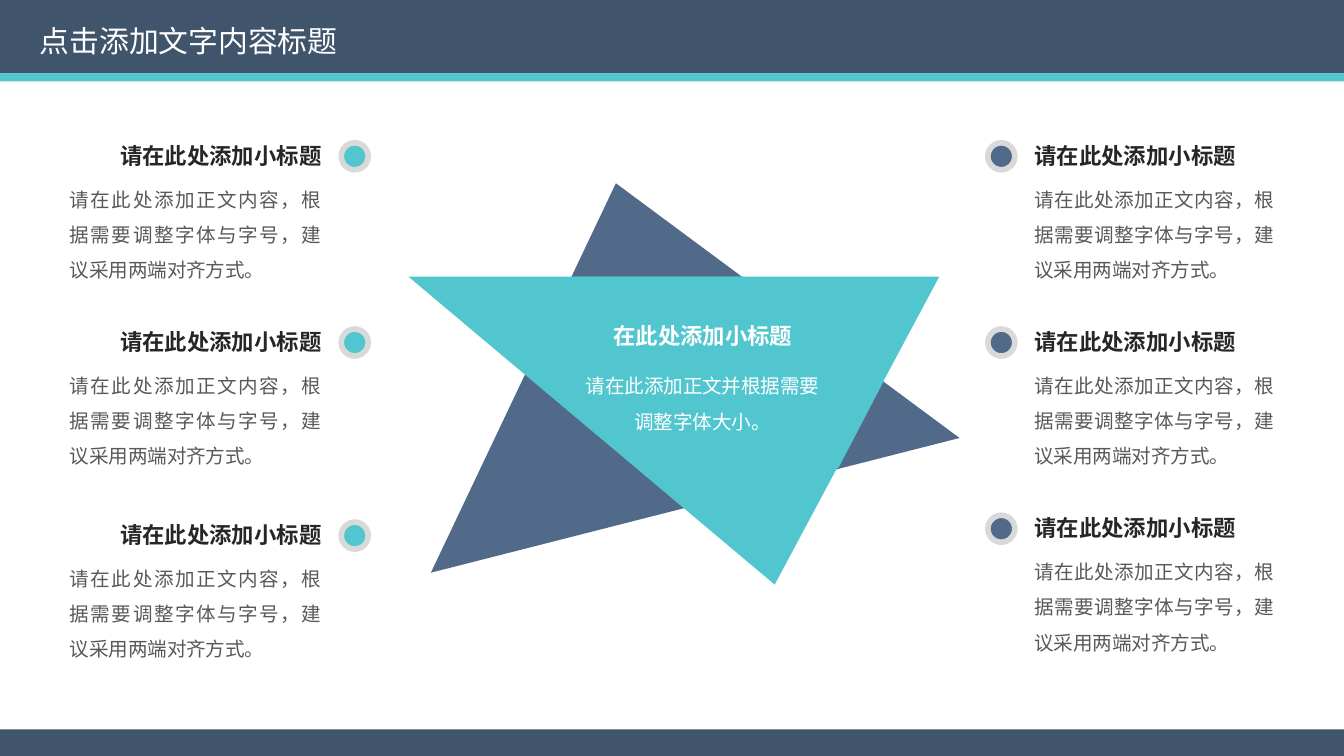
from dataclasses import dataclass

from lxml import etree
from pptx import Presentation
from pptx.dml.color import RGBColor
from pptx.enum import shapes, text
from pptx.oxml import ns
from pptx.util import Cm, Pt


@dataclass(frozen=True)
class Theme:
    font: str = "Noto Sans CJK SC"
    navy: str = "40546C"
    blue: str = "516A89"
    teal: str = "51C6CF"
    ring: str = "D9D9D9"
    white: str = "FFFFFF"
    dark: str = "262626"
    gray: str = "595959"
    title: float = 16
    head: float = 12
    body: float = 10.5


class Deck:
    """Holds the theme and the slide being drawn."""

    def __init__(self, theme, slide):
        self.theme = theme
        self.slide = slide

    def paint(self, shape, color):
        shape.shadow.inherit = False
        shape.fill.solid()
        shape.fill.fore_color.rgb = RGBColor.from_string(color)
        shape.line.fill.background()
        return shape

    def shape(self, kind, box, color):
        item = self.slide.shapes.add_shape(kind, *map(Cm, box))
        return self.paint(item, color)

    def bar(self, top, height, color):
        self.shape(shapes.MSO_SHAPE.RECTANGLE, (0, top, 25.4, height), color)

    def tri(self, box, tip, turn, color):
        item = self.shape(shapes.MSO_SHAPE.ISOSCELES_TRIANGLE, box, color)
        item.adjustments[0] = tip
        item.rotation = turn

    def poly(self, points, color):
        start, *rest = [(Cm(x), Cm(y)) for x, y in points]
        pen = self.slide.shapes.build_freeform(*start)
        pen.add_line_segments(rest, close=True)
        self.paint(pen.convert_to_shape(), color)

    def dot(self, left, top, color):
        item = self.shape(shapes.MSO_SHAPE.OVAL, (left, top, 0.51, 0.51), color)
        item.line.color.rgb = RGBColor.from_string(self.theme.ring)
        item.line.width = Pt(3)

    def style(self, item, words, size, color, align, bold=False, space=1, wrap=True):
        frame = item.text_frame
        frame.text = words
        frame.word_wrap = wrap
        frame.auto_size = text.MSO_AUTO_SIZE.SHAPE_TO_FIT_TEXT
        frame.vertical_anchor = text.MSO_ANCHOR.TOP
        para = frame.paragraphs[0]
        para.alignment = align
        para.line_spacing = space
        run = para.runs[0]
        run.font.size = Pt(size)
        run.font.bold = bold
        run.font.color.rgb = RGBColor.from_string(color)
        run.font.name = self.theme.font
        east = etree.SubElement(run._r.get_or_add_rPr(), ns.qn("a:ea"))
        east.set("typeface", self.theme.font)
        return frame

    def label(self, box, *args, **look):
        item = self.slide.shapes.add_textbox(*map(Cm, box))
        return self.style(item, *args, **look)

    def title(self, words, box):
        item = self.slide.shapes.title
        item.left, item.top, item.width, item.height = map(Cm, box)
        self.style(item, words, self.theme.title, self.theme.white,
                   text.PP_ALIGN.LEFT, wrap=False)
        item.element.getparent().append(item.element)

    def note(self, top, dot, head, body, color, align):
        look = self.theme
        self.dot(dot, top + 0.14, color)
        self.label((head[0], top, head[1], 0.76), "请在此处添加小标题",
                   look.head, look.dark, align, bold=True)
        self.label((body[0], top + 0.64, body[1], 2.29),
                   "请在此处添加正文内容，根据需要调整字体与字号，建议采用两端对齐方式。",
                   look.body, look.gray, text.PP_ALIGN.JUSTIFY, space=1.5)


def main():
    show = Presentation()
    show.slide_width, show.slide_height = Cm(25.4), Cm(14.29)
    look = Theme()
    deck = Deck(look, show.slides.add_slide(show.slide_layouts[5]))
    mid = text.PP_ALIGN.CENTER

    deck.bar(0, 1.39, look.navy)
    deck.bar(1.39, 0.15, look.teal)
    deck.bar(13.79, 0.5, look.navy)

    deck.tri((7.21, 3.38, 10.31, 6.27), 0.505, 345.7, look.blue)
    deck.tri((7.72, 5.23, 10.03, 5.82), 0.31, 180, look.teal)
    deck.poly([(10.82, 5.23), (14.05, 5.23), (16.71, 7.19),
               (15.85, 8.84), (12.93, 9.6), (9.93, 7.06)], look.teal)
    deck.label((10.82, 5.97, 4.93, 0.76), "在此处添加小标题",
               look.head, look.white, mid, bold=True)
    frame = deck.label((11.02, 6.73, 4.52, 1.6), "请在此添加正文并根据需要调整字体大小。",
                       look.body, look.white, mid, space=1.5)
    frame.margin_left = frame.margin_right = 0

    for top in (2.56, 6.08, 9.6):
        deck.note(top, 18.67, (19.3, 5.03), (19.3, 5.03), look.blue,
                  text.PP_ALIGN.LEFT)
    for top in (2.56, 6.08, 9.73):
        deck.note(top, 6.45, (1.35, 4.98), (1.07, 5.26), look.teal,
                  text.PP_ALIGN.RIGHT)

    deck.title("点击添加文字内容标题", (0.5, 0.3, 6.22, 0.94))
    show.save("out.pptx")


if __name__ == "__main__":
    main()
